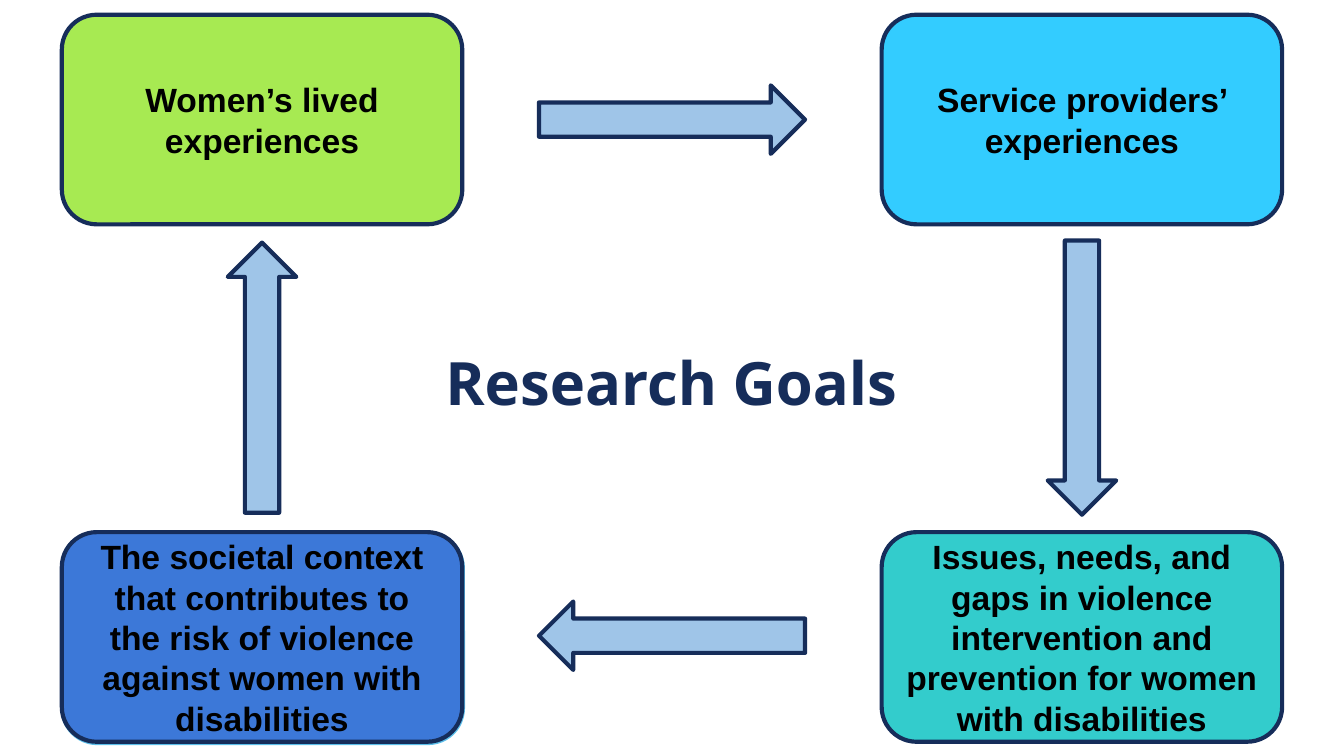
from lxml import etree
from pptx import Presentation
from pptx.dml.color import RGBColor
from pptx.enum.shapes import MSO_SHAPE as Shape
from pptx.enum.text import MSO_ANCHOR as Anchor, PP_ALIGN as Align
from pptx.oxml.ns import qn
from pptx.util import Inches, Pt

SLIDE_WIDTH = 10
SLIDE_HEIGHT = SLIDE_WIDTH * 9 / 16
NAVY = "162D5A"
ARROW_BLUE = "9FC5E8"
LEFT, RIGHT, TOP, BOTTOM = 0.46, 6.56, 0.11, 3.96
GOAL_WIDTH, GOAL_HEIGHT = 2.98, 1.56
ARROW_HEIGHT = 0.51

GOALS = [
    (LEFT, TOP, "A7EA52", "Women’s lived experiences"),
    (RIGHT, BOTTOM, "33CCCC", "Issues, needs, and gaps in violence intervention "
     "and prevention for women with disabilities"),
    (LEFT, BOTTOM, "3C78D8", "The societal context that contributes to the risk "
     "of violence against women with disabilities"),
    (RIGHT, TOP, "33CCFF", "Service providers’ experiences"),
]
ARROWS = [
    (5, 0.89, 1.98, 0),
    (5, 4.73, 1.98, 180),
    (1.95, 2.81, 2.01, 270),
    (8.05, 2.81, 2.04, 90),
]


def color(value):
    return RGBColor.from_string(value)


def write(target, text, size=18, font="Arial", ink="000000", anchor=Anchor.MIDDLE):
    frame = target.text_frame
    frame.word_wrap = True
    frame.vertical_anchor = anchor
    frame.margin_left = frame.margin_right = Inches(0.1)
    frame.margin_top = frame.margin_bottom = Inches(0.1)
    paragraph = frame.paragraphs[0]
    paragraph.alignment = Align.CENTER
    run = paragraph.add_run()
    run.text = text
    run.font.size = Pt(size)
    run.font.name = font
    run.font.bold = True
    run.font.color.rgb = color(ink)


def add_outlined(slide, kind, left, top, width, height, fill):
    outlined = slide.shapes.add_shape(
        kind, Inches(left), Inches(top), Inches(width), Inches(height))
    outlined.shadow.inherit = False
    outlined.fill.solid()
    outlined.fill.fore_color.rgb = color(fill)
    outlined.line.color.rgb = color(NAVY)
    outlined.line.width = Pt(2.25)
    return outlined


def add_goal(slide, left, top, fill, text):
    goal = add_outlined(slide, Shape.ROUNDED_RECTANGLE, left, top,
                        GOAL_WIDTH, GOAL_HEIGHT, fill)
    goal.adjustments[0] = 1 / 6
    write(goal, text)
    return goal


def add_arrow(slide, center_x, center_y, length, rotation):
    arrow = add_outlined(slide, Shape.RIGHT_ARROW, center_x - length / 2,
                         center_y - ARROW_HEIGHT / 2, length, ARROW_HEIGHT, ARROW_BLUE)
    arrow.rotation = rotation


def add_shadow(goal, tint, opacity, distance, angle):
    effects = goal._element.spPr.find(qn("a:effectLst"))
    shadow = etree.SubElement(effects, qn("a:outerShdw"), blurRad="0",
                              dist=str(Pt(distance)), dir=str(angle * 60000),
                              algn="ctr", rotWithShape="0")
    shade = etree.SubElement(shadow, qn("a:srgbClr"), val=tint)
    etree.SubElement(shade, qn("a:alpha"), val=str(opacity * 1000))


def add_title(slide, text):
    title = slide.shapes.title
    title.left, title.top = Inches(1.8), Inches(2.41)
    title.width, title.height = Inches(6.39), Inches(0.8)
    write(title, text, size=32, font="Noto Sans", ink=NAVY, anchor=Anchor.BOTTOM)


def main():
    deck = Presentation()
    deck.slide_width, deck.slide_height = Inches(SLIDE_WIDTH), Inches(SLIDE_HEIGHT)
    slide = deck.slides.add_slide(deck.slide_layouts[5])
    add_title(slide, "Research Goals")
    women, issues, society, providers = [add_goal(slide, *goal) for goal in GOALS]
    add_shadow(society, "16A3E0", opacity=70, distance=0.8, angle=64)
    for arrow in ARROWS:
        add_arrow(slide, *arrow)
    deck.save("out.pptx")


if __name__ == "__main__":
    main()
